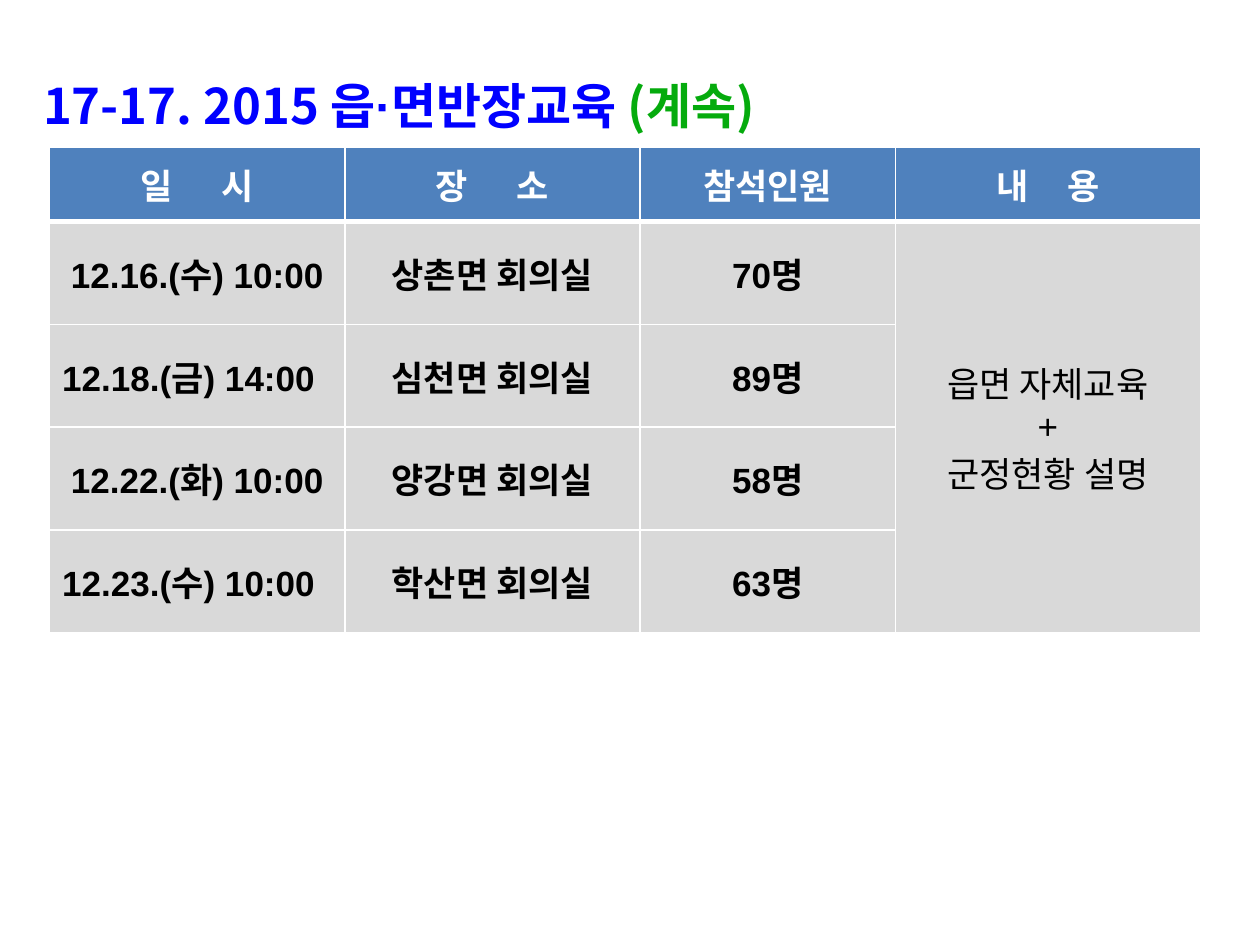
import lxml.etree
import pptx
import pptx.dml.color
import pptx.enum.text
import pptx.oxml.ns
import pptx.util

Cm, Pt = pptx.util.Cm, pptx.util.Pt
qn = pptx.oxml.ns.qn
ALIGN = pptx.enum.text.PP_ALIGN
MIDDLE = pptx.enum.text.MSO_ANCHOR.MIDDLE

COLORS = {
    "title": "0000FF",
    "continued": "05AB0D",
    "header": "4F81BD",
    "body": "D9D9D9",
    "white": "FFFFFF",
    "black": "000000",
}


def add_run(p, text, color, **fmt):
    r = p.add_run()
    r.text = text
    for name, value in fmt.items():
        setattr(r.font, name, value)
    r.font.color.rgb = pptx.dml.color.RGBColor.from_string(COLORS[color])
    return r


def style_cell(cell, fill, top, bottom):
    cell.vertical_anchor = MIDDLE
    tcPr = cell._tc.get_or_add_tcPr()
    for side, width in {"lnL": 1, "lnR": 1, "lnT": top, "lnB": bottom}.items():
        ln = lxml.etree.SubElement(tcPr, qn("a:" + side), w=str(Pt(width)))
        solid = lxml.etree.SubElement(ln, qn("a:solidFill"))
        lxml.etree.SubElement(solid, qn("a:srgbClr"), val=COLORS["white"])
    cell.fill.solid()
    cell.fill.fore_color.rgb = pptx.dml.color.RGBColor.from_string(COLORS[fill])


prs = pptx.Presentation()
prs.slide_width, prs.slide_height = Cm(25.4), Cm(19.05)
s = prs.slides.add_slide(prs.slide_layouts[6])

# Title
sp = s.shapes.add_textbox(Cm(0.62), Cm(0.81), Cm(23.83), Cm(8.26))
tf = sp.text_frame
tf.word_wrap = True
p = tf.paragraphs[0]
p.alignment = ALIGN.LEFT
p.line_spacing = 1.5
for text, font, color in [
    ("17-17. 2015 읍", "Noto Sans CJK KR", "title"),
    ("·", "Arial", "title"),
    ("면반장교육 ", "Noto Sans CJK KR", "title"),
    ("(계속)", "Noto Sans CJK KR", "continued"),
]:
    add_run(p, text, color, name=font, size=Pt(28), bold=True)

# Table grid
widths = [5.95, 5.95, 5.15, 6.15]
sessions = [
    ("12.16.(수) 10:00", "상촌면 회의실", "70명"),
    ("12.18.(금) 14:00", "심천면 회의실", "89명"),
    ("12.22.(화) 10:00", "양강면 회의실", "58명"),
    ("12.23.(수) 10:00", "학산면 회의실", "63명"),
]
heights = [1.5] + [2.07] * len(sessions)
table = s.shapes.add_table(len(heights), len(widths), Cm(1), Cm(2.97),
                           Cm(sum(widths)), Cm(sum(heights))).table
table.horz_banding = False
for column, width in zip(table.columns, widths):
    column.width = Cm(width)
for i, (row, height) in enumerate(zip(table.rows, heights)):
    row.height = Cm(height)
    for cell in row.cells:
        style_cell(cell, "body" if i else "header",
                   top=3 if i == 1 else 1, bottom=1 if i else 3)

cell_font = {"name": "Arial", "size": Pt(20)}

# Header row: a widened space sets the two syllables apart
headers = [("일 시", 2330), ("장 소", 2330), ("참석인원", 0), ("내 용", 1780)]
for col, (label, gap) in enumerate(headers):
    p = table.cell(0, col).text_frame.paragraphs[0]
    p.alignment = ALIGN.CENTER
    for part in label.partition(" "):
        if part:
            r = add_run(p, part, "white", bold=True, **cell_font)
            if part == " ":
                r.font._element.set("spc", str(gap))

# Sessions: every second date is left-aligned
for row, session in enumerate(sessions, 1):
    for col, text in enumerate(session):
        p = table.cell(row, col).text_frame.paragraphs[0]
        p.alignment = ALIGN.LEFT if col == 0 and row % 2 == 0 else ALIGN.CENTER
        add_run(p, text, "black", bold=True, **cell_font)

# Shared content cell
cell = table.cell(1, 3)
cell.merge(table.cell(len(sessions), 3))
tf = cell.text_frame
for i, text in enumerate(["읍면 자체교육", "+", "군정현황 설명"]):
    p = tf.add_paragraph() if i else tf.paragraphs[0]
    p.alignment = ALIGN.CENTER
    add_run(p, text, "black", bold=False, **cell_font)

prs.save("out.pptx")
